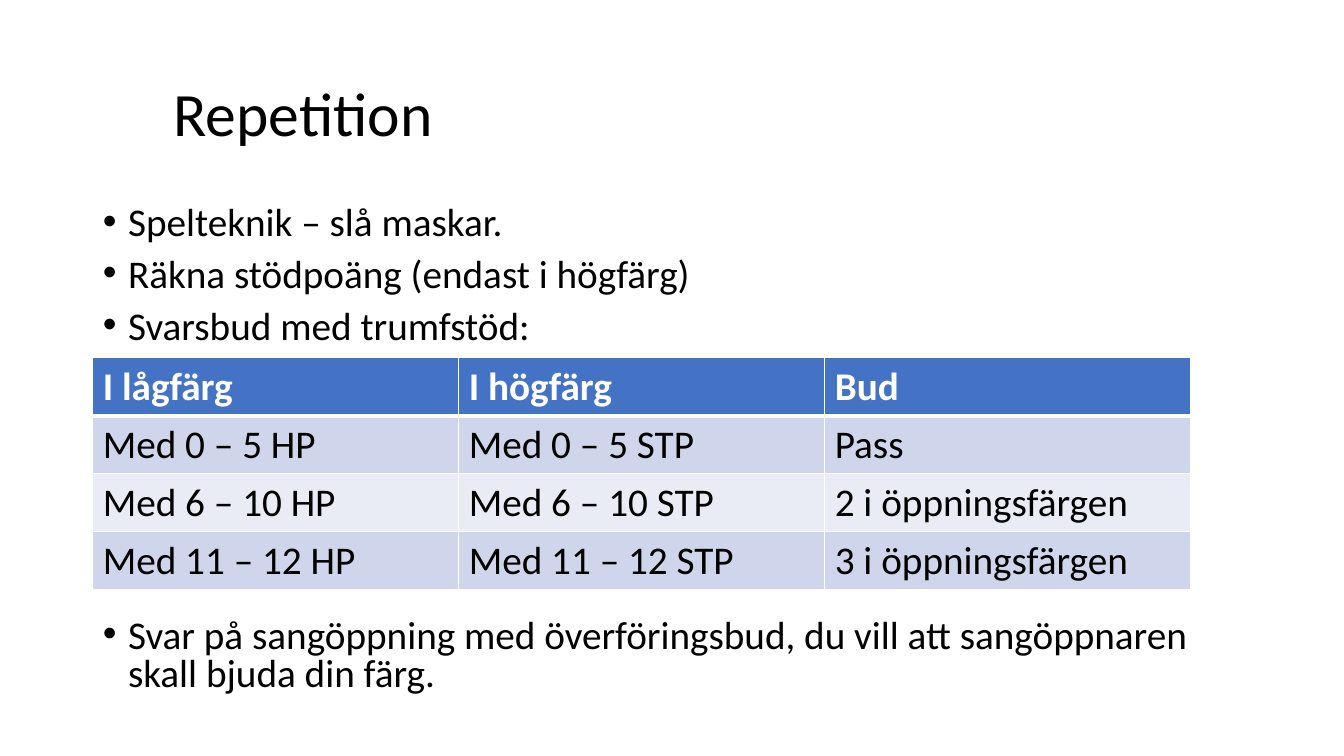
from dataclasses import dataclass
from lxml.etree import SubElement
from pptx import Presentation
from pptx.dml.color import RGBColor
from pptx.enum.text import MSO_ANCHOR, MSO_AUTO_SIZE, PP_ALIGN
from pptx.oxml.ns import qn
from pptx.util import Inches, Pt


@dataclass(frozen=True)
class Theme:
    font: str = "Calibri"
    ink: str = "000000"
    white: str = "FFFFFF"
    head: str = "4472C4"
    bands: tuple = ("E9EBF5", "CFD5EA")
    title: int = 44
    body: int = 28


theme = Theme()


def write(para, text, size, color, bold=False):
    run = para.add_run()
    run.text = text
    font = run.font
    font.name, font.size, font.bold = theme.font, Pt(size), bold
    font.color.rgb = RGBColor.from_string(color)


def place(shape, left, top, width, height):
    shape.left, shape.top = Inches(left), Inches(top)
    shape.width, shape.height = Inches(width), Inches(height)


deck = Presentation()
deck.slide_width, deck.slide_height = Inches(13.33), Inches(7.5)
slide = deck.slides.add_slide(deck.slide_layouts[1])

title = slide.shapes.title
place(title, 1.62, 0.43, 11.5, 1.45)
frame = title.text_frame
frame.auto_size = MSO_AUTO_SIZE.NONE
frame.vertical_anchor = MSO_ANCHOR.MIDDLE
para = frame.paragraphs[0]
para.alignment = PP_ALIGN.LEFT
para.line_spacing = 0.9
write(para, "Repetition", theme.title, theme.ink)

body = slide.placeholders[1]
place(body, 0.92, 2, 11.5, 5.21)
frame = body.text_frame
frame.auto_size = MSO_AUTO_SIZE.NONE
points = [
    ("Spelteknik – slå maskar.", 10),
    ("Räkna stödpoäng (endast i högfärg)", 10),
    ("Svarsbud med trumfstöd:", 10),
    ("Svar på sangöppning med överföringsbud, du vill att sangöppnaren skall bjuda din färg.", 194),
]
for i, (text, gap) in enumerate(points):
    para = frame.add_paragraph() if i else frame.paragraphs[0]
    para.line_spacing = 0.8
    para.space_before = Pt(gap)
    props = para._p.get_or_add_pPr()
    props.set("marL", str(Inches(0.25)))
    props.set("indent", str(Inches(-0.25)))
    SubElement(props, qn("a:buFont"), typeface="Arial")
    SubElement(props, qn("a:buChar"), char="•")
    write(para, text, theme.body, theme.ink)

bids = [
    ("I lågfärg", "I högfärg", "Bud"),
    ("Med 0 – 5 HP", "Med 0 – 5 STP", "Pass"),
    ("Med 6 – 10 HP", "Med 6 – 10 STP", "2 i öppningsfärgen"),
    ("Med 11 – 12 HP", "Med 11 – 12 STP", "3 i öppningsfärgen"),
]
table = slide.shapes.add_table(
    len(bids), 3, Inches(0.92), Inches(3.55), Inches(10.89), Inches(2.28)
).table
for col in table.columns:
    col.width = Inches(3.63)
for r, line in enumerate(bids):
    table.rows[r].height = Inches(0.57)
    for c, text in enumerate(line):
        cell = table.cell(r, c)
        props = cell._tc.get_or_add_tcPr()
        for side in "LRTB":
            thick = (r, side) in ((0, "B"), (1, "T"))
            edge = SubElement(props, qn("a:ln" + side), w=str(Pt(3 if thick else 1)))
            paint = SubElement(edge, qn("a:solidFill"))
            SubElement(paint, qn("a:srgbClr"), val=theme.white)
        cell.fill.solid()
        shade = theme.bands[r % 2] if r else theme.head
        cell.fill.fore_color.rgb = RGBColor.from_string(shade)
        color = theme.ink if r else theme.white
        write(cell.text_frame.paragraphs[0], text, theme.body, color, r == 0)

deck.save("out.pptx")
